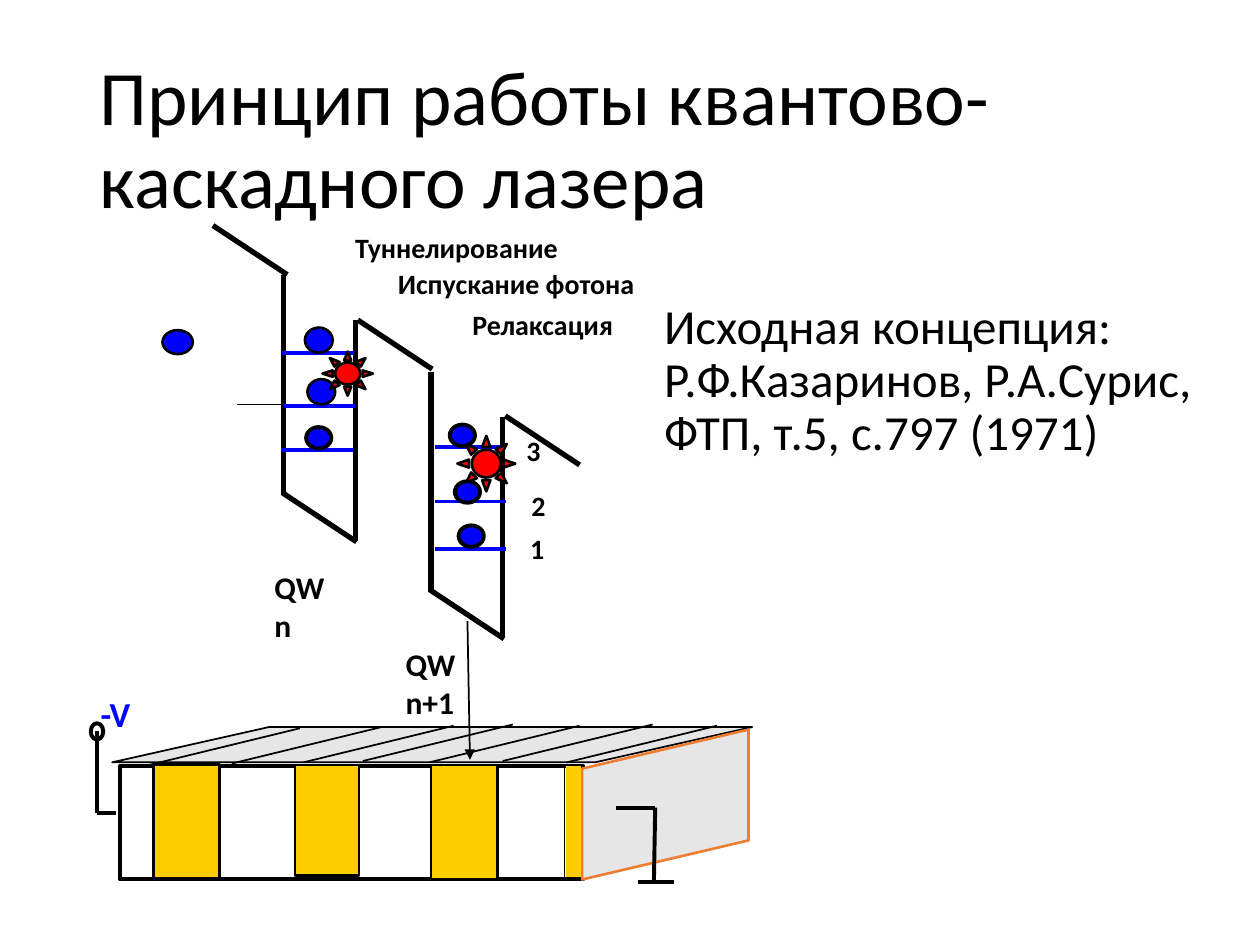
from lxml import etree
from pptx import Presentation
from pptx.dml.color import RGBColor
from pptx.enum import shapes, text
from pptx.oxml.ns import qn
from pptx.util import Inches, Pt

BLACK, BLUE, RED, YELLOW, GREY, ORANGE = (
    "000000", "0000FF", "FF0000", "FFCC00", "E7E6E6", "ED7D31")
FONT = "Calibri"
KIND = shapes.MSO_SHAPE

TITLE = "Принцип работы квантово-каскадного лазера"
SOURCE = "Исходная концепция: Р.Ф.Казаринов, Р.А.Сурис, ФТП, т.5, с.797 (1971)"

# text, left, top, width, height, size, colour
LABELS = [
    ("-V", 0.7, 5.45, 0.5, 0.43, 20, BLUE),
    ("1", 4.11, 4.17, 0.36, 0.37, 16, BLACK),
    ("2", 4.12, 3.83, 0.36, 0.37, 16, BLACK),
    ("3", 4.08, 3.39, 0.36, 0.37, 16, BLACK),
    ("QW n", 2.08, 4.46, 0.68, 0.33, 18, BLACK),
    ("QW n+1", 3.12, 5.07, 0.85, 0.33, 18, BLACK),
    ("Туннелирование", 2.72, 1.78, 1.88, 0.37, 16, BLACK),
    ("Испускание фотона", 3.06, 2.07, 2.1, 0.37, 16, BLACK),
    ("Релаксация", 3.65, 2.39, 1.51, 0.37, 16, BLACK),
]

# Layered crystal
HATCH_STARTS = [(1.19, 6.07), (1.84, 6.06), (2.41, 6.05), (2.88, 6.04),
                (3.41, 6.05), (3.99, 6.04), (4.5, 6.05)]
HATCH = (1.19, -0.29)
SIDE_FACE = [(4.62, 6.1), (5.94, 5.79), (5.94, 6.67), (4.62, 6.98)]
# left, top, width, height, fill, line width
LAYERS = [
    (1.22, 6.07, 0.52, 0.9, YELLOW, 1.5),
    (2.34, 6.07, 0.51, 0.88, YELLOW, 1.5),
    (3.42, 6.07, 0.53, 0.91, YELLOW, 1.5),
    (3.94, 6.07, 0.54, 0.91, None, 0.25),
    (4.49, 6.08, 0.12, 0.88, YELLOW, None),
]
CONTACTS = [
    ((0.92, 6.45), (0.77, 6.45)), ((0.77, 6.45), (0.77, 5.8)),
    ((4.89, 6.41), (5.2, 6.41)), ((5.2, 6.41), (5.19, 7)),
    ((5.06, 7), (5.35, 7)),
]

# Band diagram
SLOPE = (0.59, 0.39)
SLOPED_EDGES = [(1.69, 1.79), (2.84, 2.54), (4.01, 3.3), (2.24, 3.91), (3.41, 4.68)]
WALL_TOPS = [(2.25, 2.18), (2.82, 2.54), (3.42, 2.95), (3.99, 3.31)]
WALL = (0, 1.75)
LEVEL_STARTS = [(2.24, 2.8), (2.25, 3.22), (2.23, 3.57),
                (3.45, 3.55), (3.45, 3.98), (3.45, 4.36)]
LEVEL = (0.57, 0)
# kind, left, top, width, height, fill, line width; from back to front
PARTICLES = [
    (KIND.OVAL, 2.43, 3.39, 0.2, 0.17, BLUE, 2.25),
    (KIND.OVAL, 3.64, 4.17, 0.2, 0.17, BLUE, 2.25),
    (KIND.OVAL, 2.44, 3.01, 0.22, 0.2, BLUE, 1.5),
    (KIND.SUN, 2.56, 2.79, 0.4, 0.35, RED, 1.5),
    (KIND.SUN, 3.63, 3.46, 0.46, 0.44, RED, 1.5),
    (KIND.OVAL, 2.42, 2.6, 0.22, 0.2, BLUE, 1.5),
    (KIND.OVAL, 3.61, 3.82, 0.2, 0.17, BLUE, 2.25),
    (KIND.OVAL, 3.57, 3.37, 0.2, 0.17, BLUE, 2.25),
    (KIND.OVAL, 1.29, 2.62, 0.24, 0.19, BLUE, 1.5),
]


def rgb(colour):
    return RGBColor.from_string(colour)


def style(shape, fill, width, line=BLACK):
    shape.shadow.inherit = False
    if fill:
        shape.fill.solid()
        shape.fill.fore_color.rgb = rgb(fill)
    else:
        shape.fill.background()
    if width:
        shape.line.width = Pt(width)
        shape.line.color.rgb = rgb(line)
    else:
        shape.line.fill.background()


def add_block(slide, kind, left, top, width, height, fill, line_width):
    block = slide.shapes.add_shape(kind, *map(Inches, (left, top, width, height)))
    style(block, fill, line_width)
    return block


def add_line(slide, start, end, width, colour=BLACK):
    line = slide.shapes.add_connector(
        shapes.MSO_CONNECTOR.STRAIGHT, *map(Inches, (*start, *end)))
    line.line.width = Pt(width)
    line.line.color.rgb = rgb(colour)
    etree.SubElement(line._element.spPr, qn("a:effectLst"))
    return line


def add_parallel_lines(slide, starts, step, width, colour=BLACK):
    for x, y in starts:
        add_line(slide, (x, y), (x + step[0], y + step[1]), width, colour)


def set_font(paragraph, size, colour=BLACK, bold=False):
    font = paragraph.font
    font.name, font.size, font.bold = FONT, Pt(size), bold
    font.color.rgb = rgb(colour)


def fill_placeholder(holder, box, content, size, anchor):
    holder.left, holder.top, holder.width, holder.height = map(Inches, box)
    frame = holder.text_frame
    frame.text = content
    frame.vertical_anchor = anchor
    frame.auto_size = text.MSO_AUTO_SIZE.NONE
    paragraph = frame.paragraphs[0]
    paragraph.alignment = text.PP_ALIGN.LEFT
    paragraph.line_spacing = 0.9
    paragraph.space_before = Pt(0)
    set_font(paragraph, size)
    return paragraph


def draw_crystal(slide):
    add_block(slide, KIND.RECTANGLE, 0.95, 6.08, 3.68, 0.9, None, 2.25)
    top_face = add_block(slide, KIND.PARALLELOGRAM, 0.89, 5.77, 5.08, 0.28, GREY, 1)
    top_face.adjustments[0] = 4.45
    corners = [(Inches(x), Inches(y)) for x, y in SIDE_FACE]
    builder = slide.shapes.build_freeform(*corners[0])
    builder.add_line_segments(corners[1:], close=True)
    style(builder.convert_to_shape(), GREY, 1.5, ORANGE)
    add_parallel_lines(slide, HATCH_STARTS, HATCH, 1)
    for layer in LAYERS:
        add_block(slide, KIND.RECTANGLE, *layer)
    for start, end in CONTACTS:
        add_line(slide, start, end, 2.25)
    add_block(slide, KIND.OVAL, 0.72, 5.74, 0.1, 0.13, None, 2.25)
    pointer = add_line(slide, (3.71, 4.93), (3.73, 6.03), 1)
    etree.SubElement(pointer.line._get_or_add_ln(), qn("a:tailEnd"), type="triangle")


def draw_bands(slide):
    add_parallel_lines(slide, SLOPED_EDGES, SLOPE, 3)
    add_parallel_lines(slide, WALL_TOPS, WALL, 3)
    add_parallel_lines(slide, LEVEL_STARTS, LEVEL, 2.25, BLUE)
    for particle in PARTICLES:
        add_block(slide, *particle)
    add_line(slide, (2.24, 3.21), (1.88, 3.21), 1)


def add_labels(slide):
    for content, left, top, width, height, size, colour in LABELS:
        label = slide.shapes.add_textbox(*map(Inches, (left, top, width, height)))
        label.text_frame.word_wrap = True
        label.text_frame.text = content
        set_font(label.text_frame.paragraphs[0], size, colour, bold=True)


def main():
    deck = Presentation()
    deck.slide_width, deck.slide_height = Inches(10), Inches(7.5)
    slide = deck.slides.add_slide(deck.slide_layouts[1])
    fill_placeholder(slide.shapes.title, (0.69, 0.4, 8.62, 1.45), TITLE, 44,
                     text.MSO_ANCHOR.MIDDLE)
    source = fill_placeholder(slide.placeholders[1], (5.17, 2.35, 4.7, 1.47),
                              SOURCE, 28, text.MSO_ANCHOR.TOP)
    properties = source._p.get_or_add_pPr()
    properties.set("marL", "0")
    properties.set("indent", "0")
    properties.insert_element_before(
        properties.makeelement(qn("a:buNone")), "a:tabLst", "a:defRPr", "a:extLst")
    draw_crystal(slide)
    draw_bands(slide)
    add_labels(slide)
    deck.save("out.pptx")


if __name__ == "__main__":
    main()
